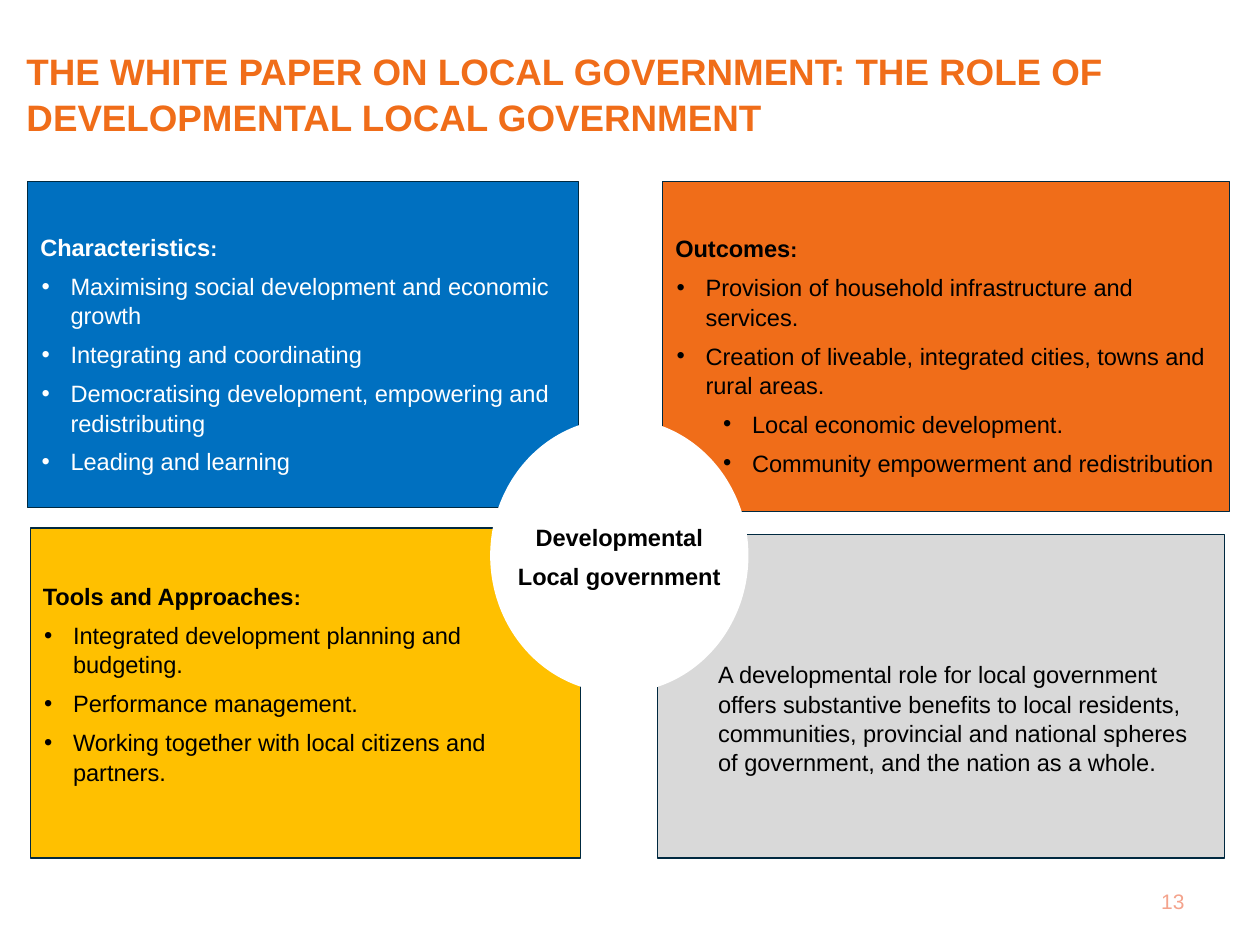
from dataclasses import dataclass

from lxml.etree import SubElement
from pptx import Presentation
from pptx.dml.color import RGBColor
from pptx.enum.shapes import MSO_SHAPE
from pptx.enum.text import MSO_ANCHOR, MSO_AUTO_SIZE, PP_ALIGN
from pptx.oxml.ns import qn
from pptx.util import Inches, Pt

COLUMNS, ROWS = 100, 75


@dataclass(frozen=True)
class Theme:
    font: str = "Arial"
    orange: str = "F06D19"
    blue: str = "0070C0"
    yellow: str = "FFC000"
    grey: str = "D9D9D9"
    white: str = "FFFFFF"
    black: str = "000000"
    outline: str = "002940"
    page: str = "F4A38C"
    title_size: float = 21
    body_size: float = 13.5
    small_size: float = 12
    line_spacing: float = 1.04
    gap: float = 5.4


def apply(target, values):
    for name, value in values.items():
        setattr(target, name, value)


class Deck:
    def __init__(self, theme):
        self.theme = theme
        self.presentation = Presentation()
        apply(self.presentation,
              {"slide_width": Inches(10), "slide_height": Inches(7.5)})
        layout = self.presentation.slide_layouts.get_by_name("Comparison")
        self.slide = self.presentation.slides.add_slide(layout)
        self.bodies = iter(list(self.slide.placeholders)[1:])

    def area(self, left, top, width, height):
        """Turn grid columns and rows into slide lengths."""
        across = self.presentation.slide_width / COLUMNS
        down = self.presentation.slide_height / ROWS
        return [int(n) for n in
                (left * across, top * down, width * across, height * down)]

    def place(self, shape, cells):
        apply(shape, dict(zip(("left", "top", "width", "height"),
                              self.area(*cells))))

    def frame(self, shape, anchor=MSO_ANCHOR.MIDDLE, side=0.1, top=0.05,
              wrap=True):
        apply(shape.text_frame, {
            "auto_size": MSO_AUTO_SIZE.NONE, "word_wrap": wrap,
            "vertical_anchor": anchor,
            "margin_left": Inches(side), "margin_right": Inches(side),
            "margin_top": Inches(top), "margin_bottom": Inches(0.05)})
        return shape.text_frame

    def paragraph(self, frame, runs, color, first=False, indent=0, bullet=False,
                  align=PP_ALIGN.LEFT):
        """Write one paragraph; runs are (text, size, bold)."""
        paragraph = frame.paragraphs[0] if first else frame.add_paragraph()
        properties = paragraph._p.get_or_add_pPr()
        properties.set("marL", str(Inches(indent)))
        properties.set("indent", str(Inches(-0.23 if bullet else 0)))
        if bullet:
            SubElement(properties, qn("a:buFont"), typeface=self.theme.font)
            SubElement(properties, qn("a:buChar"), char="•")
        else:
            SubElement(properties, qn("a:buNone"))
        apply(paragraph, {"alignment": align,
                          "line_spacing": self.theme.line_spacing,
                          "space_before": Pt(0 if first else self.theme.gap)})
        for text, size, bold in runs:
            run = paragraph.add_run()
            run.text = text
            apply(run.font, {"name": self.theme.font, "size": Pt(size),
                             "bold": bold})
            run.font.color.rgb = RGBColor.from_string(color)

    def paint(self, shape, fill):
        shape.fill.solid()
        shape.fill.fore_color.rgb = RGBColor.from_string(fill)

    def title(self, cells, text):
        heading = self.slide.shapes.title
        self.place(heading, cells)
        self.paragraph(self.frame(heading, side=0.07, top=0.04),
                       [(text, self.theme.title_size, True)],
                       self.theme.orange, first=True)

    def panel(self, cells, fill, color, top, heading=None, items=(), note=None):
        body = next(self.bodies)
        self.place(body, cells)
        self.paint(body, fill)
        body.line.color.rgb = RGBColor.from_string(self.theme.outline)
        body.line.width = Pt(0.75)
        frame = self.frame(body, MSO_ANCHOR.TOP, top=top)
        size = self.theme.body_size
        if heading:
            self.paragraph(frame, [(heading, size, True),
                                   (":", self.theme.small_size, True)],
                           color, first=True)
        for text, indent in items:
            self.paragraph(frame, [(text, size, False)], color,
                           indent=indent, bullet=True)
        if note:
            self.paragraph(frame, [(note, size, False)], color, first=True,
                           indent=0.38)

    def hub(self, cells, lines):
        circle = self.slide.shapes.add_shape(MSO_SHAPE.OVAL, *self.area(*cells))
        circle.shadow.inherit = False
        self.paint(circle, self.theme.white)
        circle.line.fill.background()
        frame = self.frame(circle, side=0.07, wrap=False)
        for number, text in enumerate(lines):
            self.paragraph(frame, [(text, self.theme.body_size, True)],
                           self.theme.black, first=number == 0,
                           align=PP_ALIGN.CENTER)

    def page_number(self, cells, text):
        box = self.slide.shapes.add_textbox(*self.area(*cells))
        self.paragraph(self.frame(box), [(text, self.theme.small_size, False)],
                       self.theme.page, first=True, align=PP_ALIGN.RIGHT)


def main():
    theme = Theme()
    deck = Deck(theme)
    main_level, sub_level = 0.24, 0.61

    # Heading and page number
    deck.page_number((71.7, 69.5, 23.3, 4), "13")
    deck.title((1.4, 4.2, 95.1, 6.5),
               "THE WHITE PAPER ON LOCAL GOVERNMENT: THE ROLE OF "
               "DEVELOPMENTAL LOCAL GOVERNMENT")

    # Four panels
    deck.panel((52.6, 14.4, 45, 26.2), theme.orange, theme.black, 0.41,
               "Outcomes", [
                   ("Provision of household infrastructure and services.",
                    main_level),
                   ("Creation of liveable, integrated cities, towns and "
                    "rural areas.", main_level),
                   ("Local economic development.", sub_level),
                   ("Community empowerment and redistribution", sub_level)])
    deck.panel((2.2, 14.4, 43.7, 25.9), theme.blue, theme.white, 0.4,
               "Characteristics", [
                   (text, main_level) for text in (
                       "Maximising social development and economic growth",
                       "Integrating and coordinating",
                       "Democratising development, empowering and "
                       "redistributing",
                       "Leading and learning")])
    deck.panel((52.2, 42.4, 45, 25.7), theme.grey, theme.black, 0.99,
               note="A developmental role for local government offers "
                    "substantive benefits to local residents, communities, "
                    "provincial and national spheres of government, and the "
                    "nation as a whole.")
    deck.panel((2.4, 41.9, 43.7, 26.2), theme.yellow, theme.black, 0.42,
               "Tools and Approaches", [
                   (text, main_level) for text in (
                       "Integrated development planning and budgeting.",
                       "Performance management.",
                       "Working together with local citizens and partners.")])

    # Central circle
    deck.hub((38.9, 33.2, 20.5, 21.8), ("Developmental", "Local government"))

    deck.presentation.save("out.pptx")


if __name__ == "__main__":
    main()
